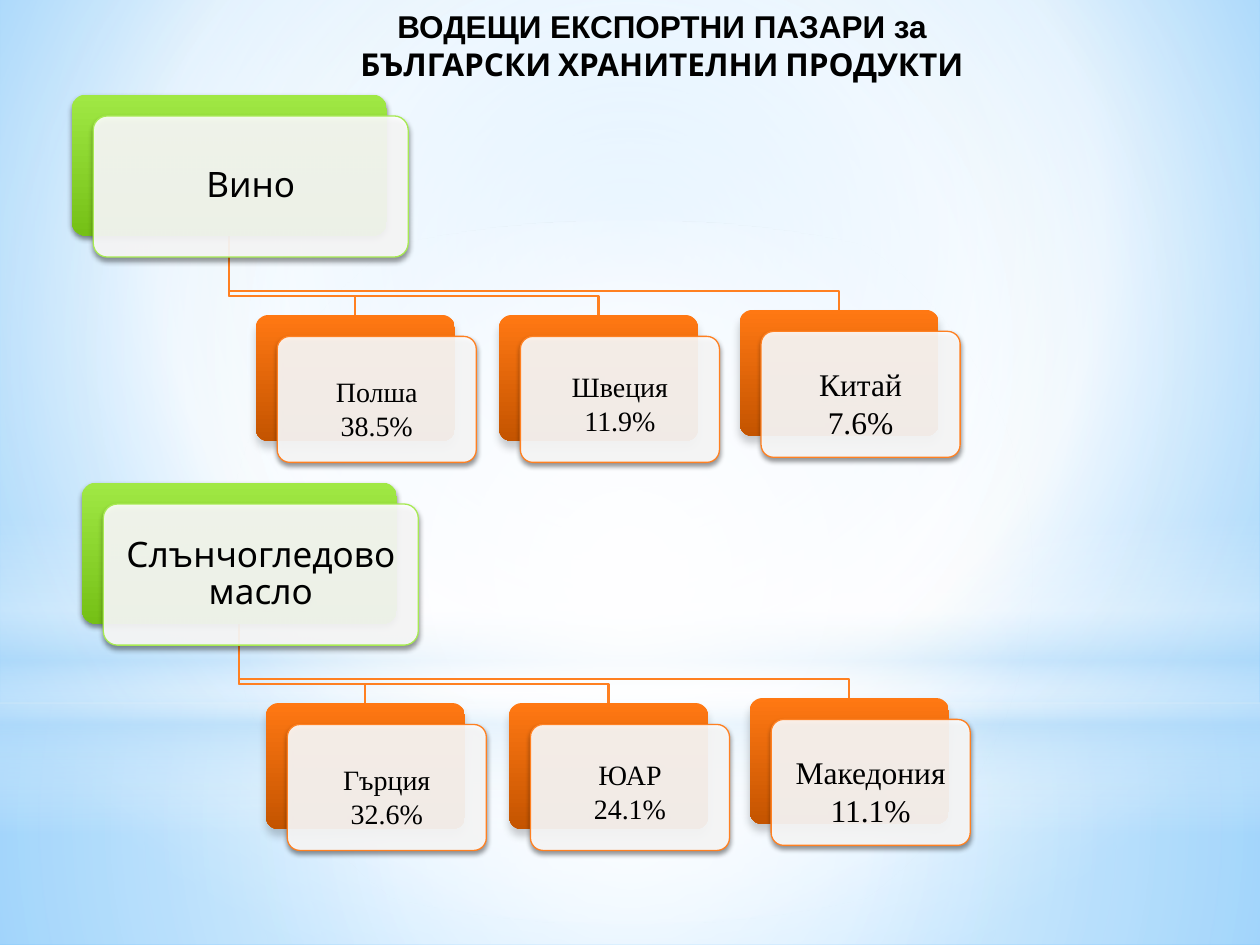
import pptx
import pptx.dml.color
import pptx.enum.shapes
import pptx.enum.text
import pptx.oxml
import pptx.oxml.ns
import pptx.util
from pptx.util import Inches
from lxml import etree

SHAPES = pptx.enum.shapes.MSO_SHAPE
CENTER = (50, 50, 50, 50)
GREEN = {"stops": [(0, "A0E844"), (100, "75C016")], "line": "A7EA52", "shadow": (45, 3.1, 1.8)}
ORANGE = {"stops": [(0, "FF7813"), (100, "C45400")], "line": "FF8021", "shadow": (20, 5, 4)}
CARD_SHADOW = (45, 3.1, 1.8)
PRODUCT_SIZE = (2.5, 1.12)
MARKET_SIZE = (1.58, 1)
CARD_SHIFT = 0.17
# Left and top of each market, relative to its product
MARKET_PLACES = [(1.46, 1.75), (3.39, 1.75), (5.3, 1.71)]


def color(value):
    return pptx.dml.color.RGBColor.from_string(value)


def child(parent, tag, **attributes):
    element = etree.SubElement(parent, pptx.oxml.ns.qn("a:" + tag))
    for name, value in attributes.items():
        element.set(name, str(value))
    return element


def color_element(parent, value, opacity=100):
    element = child(parent, "srgbClr", val=value)
    if opacity < 100:
        child(element, "alpha", val=opacity * 1000)


def set_gradient(fill, element, stops, focus=None):
    """Fill with (position, colour, opacity) stops, downwards or around a focus."""
    fill.gradient()
    gradient = next(element.iter(pptx.oxml.ns.qn("a:gradFill")))
    for part in list(gradient):
        gradient.remove(part)
    stop_list = child(gradient, "gsLst")
    for position, *paint in stops:
        color_element(child(stop_list, "gs", pos=position * 1000), *paint)
    if focus:
        circle = child(gradient, "path", path="circle")
        child(circle, "fillToRect", **{side: share * 1000 for side, share in zip("ltrb", focus)})
    else:
        child(gradient, "lin", ang=90 * 60000, scaled=0)


def set_shadow(shape, opacity, blur, distance):
    effects = shape._element.spPr.find(pptx.oxml.ns.qn("a:effectLst"))
    shadow = child(effects, "outerShdw", blurRad=pptx.util.Pt(blur),
                   dist=pptx.util.Pt(distance), dir=90 * 60000, rotWithShape=0)
    color_element(shadow, "000000", opacity)


def add_shape(slide, kind, left, top, width, height):
    shape = slide.shapes.add_shape(kind, Inches(left), Inches(top), Inches(width), Inches(height))
    shape.shadow.inherit = False
    shape.line.fill.background()
    return shape


def set_text(shape, lines, fonts, size, bold=False, spacing=1.0, margin=0.1, drop=0.0):
    """Write centred lines; drop lowers them below the middle of the shape."""
    frame = shape.text_frame
    frame.word_wrap = True
    frame.vertical_anchor = pptx.enum.text.MSO_ANCHOR.MIDDLE
    frame.margin_left = frame.margin_right = frame.margin_bottom = Inches(margin)
    frame.margin_top = Inches(margin + 2 * drop)
    for index, line in enumerate(lines):
        paragraph = frame.add_paragraph() if index else frame.paragraphs[0]
        paragraph.alignment = pptx.enum.text.PP_ALIGN.CENTER
        paragraph.line_spacing = spacing
        paragraph.space_before = pptx.util.Pt(0)
        run = paragraph.add_run()
        run.text = line
        run.font.name = fonts[index % len(fonts)]
        run.font.size = pptx.util.Pt(size)
        run.font.bold = bold
        run.font.color.rgb = color("000000")


def add_card(slide, left, top, card_size, style, lines, **text_format):
    """A coloured plate with a translucent card in front of it."""
    plate = add_shape(slide, SHAPES.ROUNDED_RECTANGLE, left, top, *card_size)
    set_gradient(plate.fill, plate._element, style["stops"])
    set_shadow(plate, *style["shadow"])
    card = add_shape(slide, SHAPES.ROUNDED_RECTANGLE,
                     left + CARD_SHIFT, top + CARD_SHIFT, *card_size)
    card.fill.solid()
    card.fill.fore_color.rgb = color("FFFFFF")
    child(next(card._element.spPr.iter(pptx.oxml.ns.qn("a:srgbClr"))), "alpha", val=90000)
    card.line.color.rgb = color(style["line"])
    card.line.width = pptx.util.Pt(0.75)
    set_shadow(card, *CARD_SHADOW)
    for shape in (plate, card):
        shape.adjustments[0] = 0.1
    set_text(card, lines, **text_format)


def add_branch(slide, start_x, start_y, end_x, end_y):
    bend_y = end_y - 0.15
    builder = slide.shapes.build_freeform(Inches(start_x), Inches(start_y))
    points = [(start_x, bend_y), (end_x, bend_y), (end_x, end_y)]
    builder.add_line_segments([(Inches(x), Inches(y)) for x, y in points], close=False)
    branch = builder.convert_to_shape()
    branch.shadow.inherit = False
    branch.fill.background()
    branch.line.color.rgb = color(ORANGE["line"])
    branch.line.width = pptx.util.Pt(1.25)


def add_tree(slide, left, top, product, markets):
    """A product with branches to its export markets."""
    places = [(left + x, top + y) for x, y in MARKET_PLACES]
    for x, y in reversed(places):
        add_branch(slide, left + PRODUCT_SIZE[0] / 2, top + PRODUCT_SIZE[1],
                   x + MARKET_SIZE[0] / 2, y)
    add_card(slide, left, top, PRODUCT_SIZE, GREEN, [product],
             fonts=["Cabin"], size=20, spacing=0.9)
    for (x, y), (name, share, size, drop) in zip(places, markets):
        add_card(slide, x, y, MARKET_SIZE, ORANGE, [name, share],
                 fonts=["Times New Roman"], size=size, drop=drop)


def add_backdrop(slide):
    set_gradient(slide.background.fill, slide._element,
                 [(0, "9ED5FF"), (60, "FFFFFF"), (100, "5BB9FF")], (20, 10, 20, 60))
    layers = [
        (SHAPES.RECTANGLE, 5.58, 1.92, CENTER,
         [(0, "FFFFFF", 91), (37, "FFFFFF", 76), (100, "B4DCFA", 79)]),
        (SHAPES.RECTANGLE, 0, 5.58, CENTER,
         [(0, "FFFFFF", 89), (48, "FFFFFF", 62), (100, "B4DCFA", 79)]),
        (SHAPES.RECTANGLE, 4.12, 2.5, None,
         [(0, "FFFFFF", 0), (29, "FFFFFF", 30), (45, "B4DCFA", 40),
          (55, "FFFFFF", 26), (65, "B4DCFA", 60), (100, "FFFFFF", 0)]),
        (SHAPES.OVAL, 1.75, 5.58, CENTER, [(0, "FFFFFF"), (56, "FFFFFF", 0)]),
    ]
    for kind, top, height, focus, stops in layers:
        layer = add_shape(slide, kind, 0, top, 10, height)
        set_gradient(layer.fill, layer._element, stops, focus)


def add_title(slide):
    title = slide.shapes.title
    title.left, title.top = Inches(1.17), Inches(0)
    title.width, title.height = Inches(8.17), Inches(0.71)
    set_text(title, ["ВОДЕЩИ ЕКСПОРТНИ ПАЗАРИ за", "БЪЛГАРСКИ ХРАНИТЕЛНИ ПРОДУКТИ"],
             fonts=["Arial", "Cabin"], size=18, bold=True, margin=0.05)
    # Bring the title in front of the backdrop
    slide.shapes._spTree.append(title._element)


def main():
    presentation = pptx.Presentation()
    presentation.slide_width, presentation.slide_height = Inches(10), Inches(7.5)
    slide = presentation.slides.add_slide(presentation.slide_layouts[5])
    add_backdrop(slide)
    add_title(slide)
    # Market name, share, text size, drop
    add_tree(slide, 0.57, 0.75, "Вино", [
        ("Полша", "38.5%", 16, 0.07),
        ("Швеция", "11.9%", 16, 0.03),
        ("Китай", "7.6%", 18, 0.07),
    ])
    add_tree(slide, 0.65, 3.83, "Слънчогледово масло", [
        ("Гърция", "32.6%", 16, 0.07),
        ("ЮАР", "24.1%", 16, 0.03),
        ("Македония", "11.1%", 18, 0.07),
    ])
    presentation.save("out.pptx")


if __name__ == "__main__":
    main()
